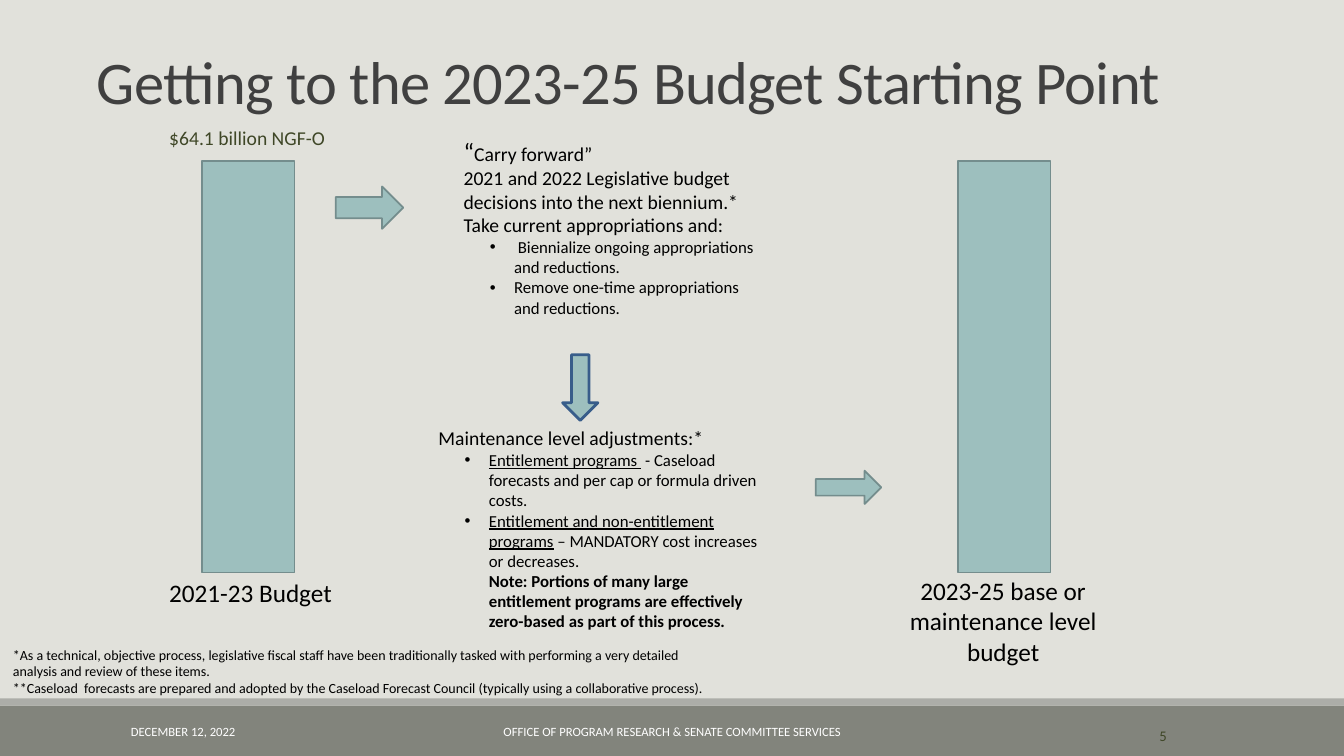
import pptx
import pptx.dml.color
import pptx.enum.shapes
import pptx.enum.text
import pptx.oxml.ns
import pptx.util
from lxml import etree

Inches, Pt = pptx.util.Inches, pptx.util.Pt
SHAPE = pptx.enum.shapes.MSO_SHAPE
ALIGN = pptx.enum.text.PP_ALIGN
ANCHOR = pptx.enum.text.MSO_ANCHOR
FONT = "Calibri"
COLORS = {
    "background": "E1E1DB", "footer": "82847C", "stripe": "ACADA8",
    "teal": "9DBFBE", "teal line": "748D8D", "blue line": "385D8A",
    "title": "404040", "olive": "3F4727", "black": "000000", "white": "FFFFFF",
}


def color(name):
    return pptx.dml.color.RGBColor.from_string(COLORS[name])


def add_block(slide, kind, box, fill, line=None, width=1.25):
    shape = slide.shapes.add_shape(kind, *map(Inches, box))
    shape.shadow.inherit = False
    shape.fill.solid()
    shape.fill.fore_color.rgb = color(fill)
    if line:
        shape.line.color.rgb = color(line)
        shape.line.width = Pt(width)
    else:
        shape.line.fill.background()


def add_run(paragraph, text, size, ink="black", **formats):
    run = paragraph.add_run()
    run.text = text
    for name, value in {"name": FONT, "size": Pt(size), **formats}.items():
        setattr(run.font, name, value)
    run.font.color.rgb = color(ink)
    return run


def indent(paragraph, bulleted):
    properties = paragraph._p.get_or_add_pPr()
    properties.set("marL", str(Inches(0.5)))
    properties.set("indent", str(Inches(-0.24 if bulleted else 0)))
    if bulleted:
        bullet_font = etree.SubElement(properties, pptx.oxml.ns.qn("a:buFont"))
        bullet_font.set("typeface", "Arial")
        bullet = etree.SubElement(properties, pptx.oxml.ns.qn("a:buChar"))
        bullet.set("char", "•")


def add_text(slide, box, size, paragraphs, ink="black", align=ALIGN.LEFT,
             anchor=ANCHOR.TOP, wrap=True):
    """Each paragraph is a string, or a (style, runs) pair with (text, formats) runs."""
    frame = slide.shapes.add_textbox(*map(Inches, box)).text_frame
    frame.word_wrap = wrap
    frame.vertical_anchor = anchor
    for index, content in enumerate(paragraphs):
        paragraph = frame.add_paragraph() if index else frame.paragraphs[0]
        paragraph.alignment = align
        style, runs = ("plain", [(content, {})]) if isinstance(content, str) else content
        if style != "plain":
            indent(paragraph, style == "bullet")
        for text, formats in runs:
            add_run(paragraph, text, **{"size": size, "ink": ink, **formats})


def add_title(slide, box, text):
    title = slide.shapes.title
    title.left, title.top, title.width, title.height = map(Inches, box)
    title.text_frame.vertical_anchor = ANCHOR.BOTTOM
    title.text_frame.word_wrap = True
    paragraph = title.text_frame.paragraphs[0]
    paragraph.alignment = ALIGN.LEFT
    paragraph.line_spacing = 0.85
    run = add_run(paragraph, text, 43.2, "title")
    run._r.get_or_add_rPr().set("spc", "-50")


def add_footer(slide, box):
    left, top, width, height = box
    add_block(slide, SHAPE.RECTANGLE, box, "footer")
    add_block(slide, SHAPE.RECTANGLE, (left, top - 0.07, width, 0.07), "stripe")
    for offset, drop, wide, size, ink, align, text in (
        (1.2, 0.06, 2.7, 9, "white", ALIGN.LEFT, "DECEMBER 12, 2022"),
        (4.03, 0.06, 5.27, 9, "white", ALIGN.CENTER,
         "OFFICE OF PROGRAM RESEARCH & SENATE COMMITTEE SERVICES"),
        (11.27, 0.1, 0.4, 10.5, "olive", ALIGN.RIGHT, "5"),
    ):
        add_text(slide, (left + offset, top + drop, wide, 0.4), size, [text],
                 ink, align, ANCHOR.MIDDLE)


def add_budget_bars(slide, box):
    left, top, width, height = box
    bar_width = 0.92
    for bar_left in (left, left + width - bar_width):
        add_block(slide, SHAPE.RECTANGLE, (bar_left, top, bar_width, height),
                  "teal", "teal line")
    add_text(slide, (left - 0.42, top - 0.4, 2.58, 0.34), 14,
             ["$64.1 billion NGF-O"], "olive")
    add_text(slide, (left - 0.42, top + height, 1.83, 0.4), 18,
             ["2021-23 Budget"], wrap=False)
    add_text(slide, (left + 6.88, top + height - 0.02, 2.14, 1.01), 18,
             ["2023-25 base or", "maintenance level", "budget"], align=ALIGN.CENTER)


def add_carry_forward(slide, box):
    add_text(slide, box, 14, [
        ("plain", [("“", {"size": 18}), ("Carry forward”", {})]),
        "2021 and 2022 Legislative budget decisions into the next biennium.*",
        "Take current appropriations and:",
        ("bullet", [(" Biennialize ongoing appropriations and reductions.", {"size": 12})]),
        ("bullet", [("Remove one-time appropriations and reductions.", {"size": 12})]),
    ])


def add_maintenance(slide, box):
    small = {"size": 12}
    underlined = {"size": 12, "underline": True}
    add_text(slide, box, 14, [
        "Maintenance level adjustments:*",
        ("bullet", [("Entitlement programs ", underlined),
                    (" - Caseload forecasts and per cap or formula driven costs.", small)]),
        ("bullet", [("Entitlement and non-entitlement programs", underlined),
                    (" – MANDATORY cost increases or decreases.", small)]),
        ("indented", [("Note: Portions of many large entitlement programs are effectively "
                       "zero-based as part of this process.", {"size": 12, "bold": True})]),
    ])


def add_arrows(slide):
    for kind, box, line, width in (
        (SHAPE.RIGHT_ARROW, (3.33, 1.85, 0.67, 0.42), "teal line", 1.25),
        (SHAPE.DOWN_ARROW, (5.58, 3.52, 0.35, 0.65), "blue line", 2),
        (SHAPE.RIGHT_ARROW, (8.09, 4.67, 0.65, 0.33), "teal line", 1.25),
    ):
        add_block(slide, kind, box, "teal", line, width)


def add_footnotes(slide, box):
    add_text(slide, box, 10, [
        "*As a technical, objective process, legislative fiscal staff have been traditionally "
        "tasked with performing a very detailed analysis and review of these items.",
        "**Caseload  forecasts are prepared and adopted by the Caseload Forecast Council "
        "(typically using a collaborative process).",
    ])


def main():
    presentation = pptx.Presentation()
    presentation.slide_width = Inches(13.33)
    presentation.slide_height = Inches(7.5)
    slide = presentation.slides.add_slide(presentation.slide_layouts[5])
    slide.background.fill.solid()
    slide.background.fill.fore_color.rgb = color("background")

    add_footer(slide, (0, 7, 13.33, 0.5))
    add_title(slide, (0.86, 0.07, 11.62, 1.14), "Getting to the 2023-25 Budget Starting Point")
    add_budget_bars(slide, (2, 1.6, 8.42, 4.08))
    add_carry_forward(slide, (4.5, 1.3, 3.17, 1.92))
    add_maintenance(slide, (4.25, 4.18, 3.42, 2.39))
    add_arrows(slide)
    add_footnotes(slide, (0.03, 6.36, 7.08, 0.61))
    presentation.save("out.pptx")


if __name__ == "__main__":
    main()
